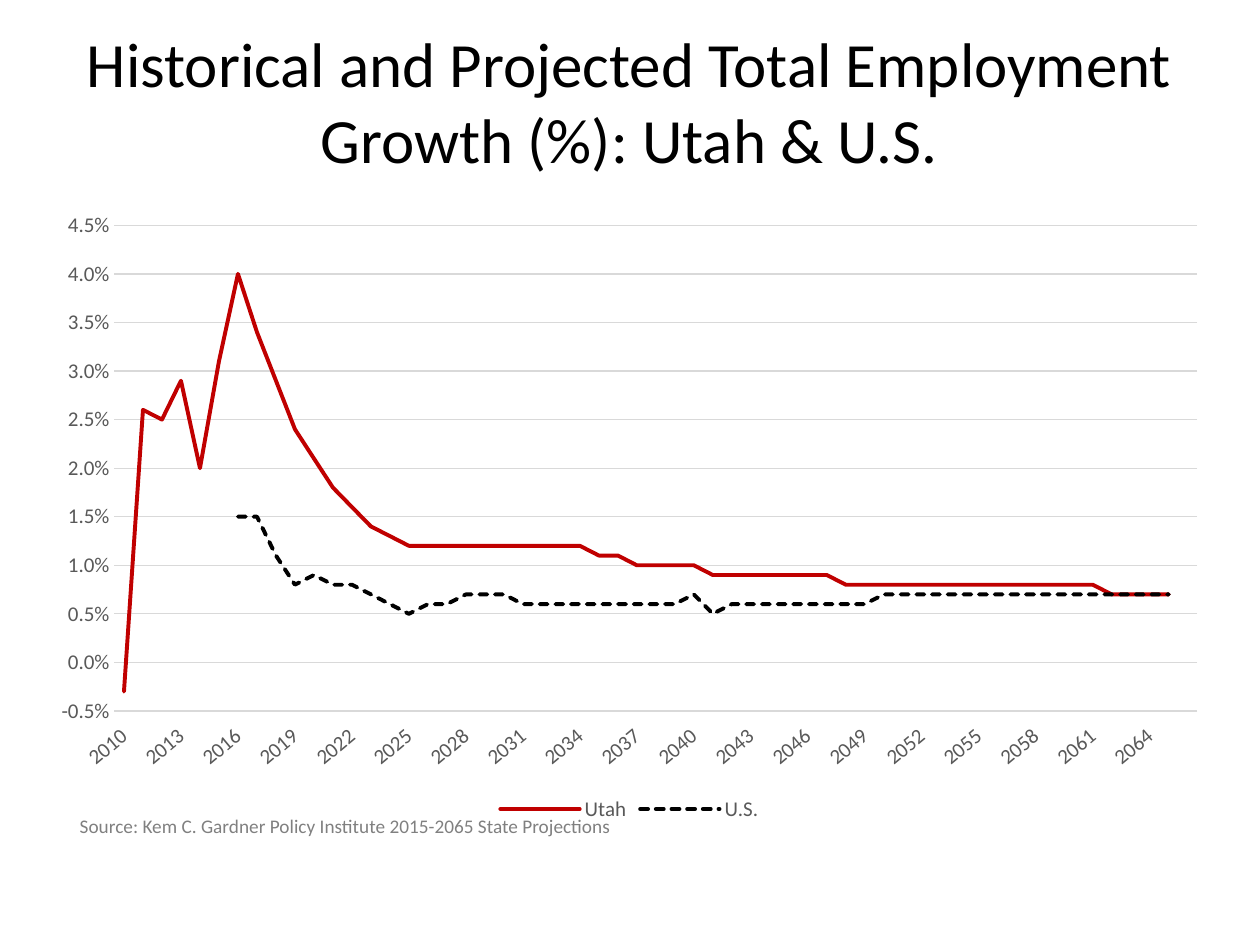
from dataclasses import dataclass
from typing import Optional

import lxml.etree
import pptx
import pptx.chart.data
import pptx.dml.color
import pptx.enum.chart
import pptx.enum.dml
import pptx.enum.text
import pptx.oxml.ns
import pptx.util

WIDE, HIGH = 10, 7.5
FONT = "Calibri"
GREY, RULE = "595959", "D9D9D9"
EDGE, SPAN = 0.3, 9.39  # left edge and width shared by title and chart
SLANT, STEP = -40, 3  # degrees of the year labels, years between them


@dataclass
class Box:
    left: float
    top: float
    width: float
    height: float

    def place(self) -> tuple:
        return tuple(map(pptx.util.Inches, (self.left, self.top, self.width, self.height)))


@dataclass
class Curve:
    name: str
    vals: list
    hue: str
    dash: Optional[pptx.enum.dml.MSO_LINE] = None


# Yearly growth in percent, 2010 to 2065, then one blank category
YEARS = [str(year) for year in range(2010, 2066)] + [""]
UTAH = ([-0.3, 2.6, 2.5, 2.9, 2, 3.1, 4, 3.4, 2.9, 2.4, 2.1, 1.8, 1.6, 1.4, 1.3]
        + [1.2] * 10 + [1.1] * 2 + [1] * 4 + [0.9] * 7 + [0.8] * 14 + [0.7] * 4 + [None])
NATION = ([None] * 6 + [1.5, 1.5, 1.1, 0.8, 0.9, 0.8, 0.8, 0.7, 0.6, 0.5, 0.6, 0.6]
          + [0.7] * 3 + [0.6] * 9 + [0.7, 0.5] + [0.6] * 8 + [0.7] * 16 + [None])
CURVES = [
    Curve("Utah", UTAH, "C00000"),
    Curve("U.S.", NATION, "000000", pptx.enum.dml.MSO_LINE.SQUARE_DOT),
]


def color(code: str) -> pptx.dml.color.RGBColor:
    return pptx.dml.color.RGBColor.from_string(code)


def style(font, size: float, hue: str) -> None:
    font.name = FONT
    font.size = pptx.util.Pt(size)
    font.color.rgb = color(hue)


def stroke(line, hue: str, width: float) -> None:
    line.color.rgb = color(hue)
    line.width = pptx.util.Pt(width)


def write(shape, box: Box, text: str, size: float, hue: str, wrap: bool) -> None:
    shape.left, shape.top, shape.width, shape.height = box.place()
    frame = shape.text_frame
    frame.text = text
    frame.word_wrap = wrap
    frame.auto_size = pptx.enum.text.MSO_AUTO_SIZE.SHAPE_TO_FIT_TEXT
    para = frame.paragraphs[0]
    para.alignment = pptx.enum.text.PP_ALIGN.CENTER
    style(para.font, size, hue)


def slant(axis) -> None:
    root = axis._element
    root.txPr.bodyPr.set("rot", str(SLANT * 60000))
    skip = lxml.etree.Element(pptx.oxml.ns.qn("c:tickLblSkip"), val=str(STEP))
    root.find(pptx.oxml.ns.qn("c:noMultiLvlLbl")).addprevious(skip)


def plot(slide, box: Box) -> None:
    data = pptx.chart.data.CategoryChartData(number_format="0.0")
    data.categories = YEARS
    for curve in CURVES:
        data.add_series(curve.name, curve.vals)
    kind = pptx.enum.chart.XL_CHART_TYPE.LINE
    chart = slide.shapes.add_chart(kind, *box.place(), data).chart
    style(chart.font, 12, "000000")
    chart.has_title = False

    # Curves
    chart.plots[0].vary_by_categories = False
    for curve, series in zip(CURVES, chart.plots[0].series):
        series.smooth = False
        series.marker.style = pptx.enum.chart.XL_MARKER_STYLE.NONE
        line = series.format.line
        stroke(line, curve.hue, 2.25)
        if curve.dash:
            line.dash_style = curve.dash
        line._get_or_add_ln().set("cap", "rnd")

    # Axes
    years, rates = chart.category_axis, chart.value_axis
    for axis in (years, rates):
        axis.major_tick_mark = axis.minor_tick_mark = pptx.enum.chart.XL_TICK_MARK.NONE
        style(axis.tick_labels.font, 12, GREY)
    years.tick_label_position = pptx.enum.chart.XL_TICK_LABEL_POSITION.LOW
    slant(years)
    stroke(years.format.line, RULE, 0.75)
    rates.minimum_scale, rates.maximum_scale, rates.major_unit = -0.5, 4.5, 0.5
    rates.tick_labels.number_format = r"#,##0.0\%"
    rates.tick_labels.number_format_is_linked = False
    rates.format.line.fill.background()
    stroke(rates.major_gridlines.format.line, RULE, 0.75)

    # Legend
    chart.has_legend = True
    chart.legend.position = pptx.enum.chart.XL_LEGEND_POSITION.BOTTOM
    chart.legend.include_in_layout = False
    style(chart.legend.font, 12, GREY)


def main() -> None:
    deck = pptx.Presentation()
    deck.slide_width = pptx.util.Inches(WIDE)
    deck.slide_height = pptx.util.Inches(HIGH)
    slide = deck.slides.add_slide(deck.slide_layouts[5])

    # Title
    write(slide.shapes.title, Box(EDGE, 0.14, SPAN, 1.31),
          "Historical and Projected Total Employment Growth (%): Utah & U.S.",
          36, "000000", True)

    # Chart
    plot(slide, Box(EDGE, 1.59, SPAN, 4.97))

    # Source line
    note = Box(0.48, 6.41, 4.52, 0.29)
    write(slide.shapes.add_textbox(*note.place()), note,
          "Source: Kem C. Gardner Policy Institute 2015-2065 State Projections",
          11, "808080", False)

    deck.save("out.pptx")


if __name__ == "__main__":
    main()
